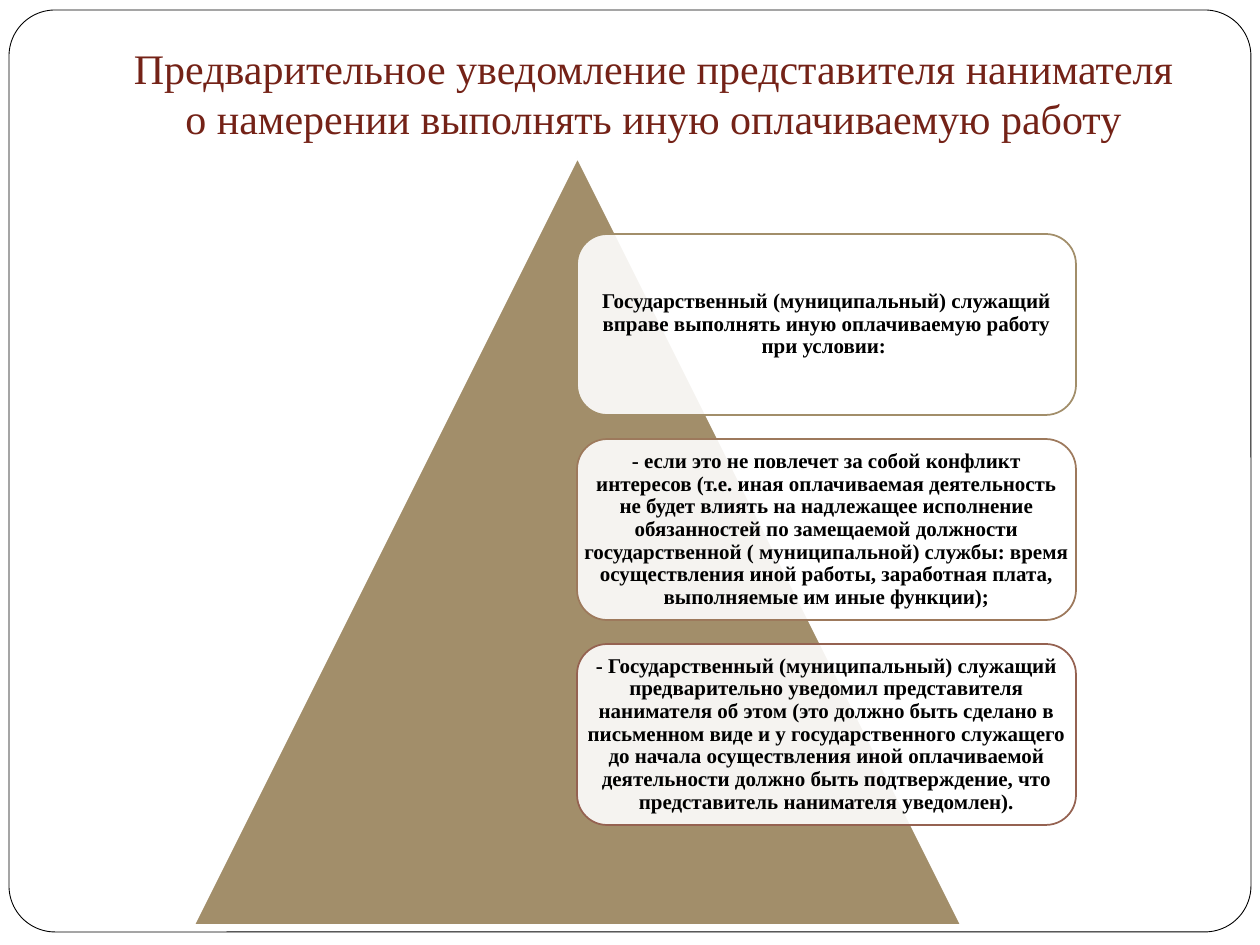
from lxml.etree import SubElement
from pptx import Presentation
from pptx.dml.color import RGBColor
from pptx.enum.shapes import MSO_SHAPE as Shape
from pptx.enum.text import MSO_ANCHOR as Anchor, MSO_AUTO_SIZE as AutoSize, PP_ALIGN as Align
from pptx.oxml.ns import qn
from pptx.util import Pt

SCALE = 914400 / 126  # EMU per px
FONT = "Times New Roman"
WHITE = RGBColor(0xFF, 0xFF, 0xFF)
BLACK = RGBColor(0x00, 0x00, 0x00)
MAROON = RGBColor(0x74, 0x22, 0x17)
SAND = RGBColor(0xA2, 0x8E, 0x6A)
TAN = RGBColor(0x9D, 0x79, 0x5C)
BROWN = RGBColor(0x95, 0x62, 0x51)


def px(*lengths):
    return [round(length * SCALE) for length in lengths]


def add_outlined(kind, place, fill, line, width):
    shape = page.shapes.add_shape(kind, *px(*place))
    shape.shadow.inherit = False
    shape.fill.solid()
    shape.fill.fore_color.rgb = fill
    shape.line.color.rgb = line
    shape.line.width = Pt(width)
    return shape


deck = Presentation()
deck.slide_width, deck.slide_height = px(1260, 945)
page = deck.slides.add_slide(deck.slide_layouts[5])

# Rounded frame behind everything
frame = add_outlined(Shape.ROUNDED_RECTANGLE, (9, 10, 1242, 922), WHITE, BLACK, 0.5)
frame.adjustments[0] = 0.05
page.shapes._spTree.insert(2, frame._element)

# Title
title = page.shapes.title
title.left, title.top, title.width, title.height = px(118, 39, 1071, 117)
text = title.text_frame
text.word_wrap = True
text.auto_size = AutoSize.NONE
text.vertical_anchor = Anchor.BOTTOM
text.margin_left, text.margin_top, text.margin_right, text.margin_bottom = px(13, 6, 13, 13)
para = text.paragraphs[0]
para.alignment = Align.CENTER
span = para.add_run()
span.text = "Предварительное уведомление представителя нанимателя о намерении выполнять иную оплачиваемую работу"
span.font.name = FONT
span.font.size = Pt(24)
span.font.color.rgb = MAROON

# Pyramid
add_outlined(Shape.ISOSCELES_TRIANGLE, (194, 158, 767, 767), SAND, WHITE, 1)

# Cards: translucent plate with a text box over its full area
CARDS = [
    (SAND, "Государственный (муниципальный) служащий вправе выполнять иную оплачиваемую работу при условии: "),
    (TAN, "- если это не повлечет за собой конфликт интересов (т.е. иная оплачиваемая деятельность "
          "не будет влиять на надлежащее исполнение обязанностей по замещаемой должности "
          "государственной ( муниципальной) службы: время осуществления иной работы, "
          "заработная плата, выполняемые им иные функции);"),
    (BROWN, "- Государственный (муниципальный) служащий предварительно уведомил представителя "
            "нанимателя об этом (это должно быть сделано в письменном виде и у государственного "
            "служащего до начала осуществления иной оплачиваемой деятельности должно быть "
            "подтверждение, что представитель нанимателя уведомлен)."),
]
for row, (color, wording) in enumerate(CARDS):
    place = (577, 234 + 205 * row, 499, 181)
    plate = add_outlined(Shape.ROUNDED_RECTANGLE, place, WHITE, color, 1)
    fill_color = plate.fill._xPr.find(qn("a:solidFill"))[0]
    SubElement(fill_color, qn("a:alpha"), val="90000")

    box = page.shapes.add_textbox(*px(*place))
    text = box.text_frame
    text.word_wrap = True
    text.vertical_anchor = Anchor.MIDDLE
    text.margin_left, text.margin_top, text.margin_right, text.margin_bottom = px(6, 6, 6, 6)
    para = text.paragraphs[0]
    para.alignment = Align.CENTER
    para.line_spacing = 0.9
    span = para.add_run()
    span.text = wording
    span.font.name = FONT
    span.font.size = Pt(12)
    span.font.bold = True
    span.font.color.rgb = BLACK

deck.save("out.pptx")
